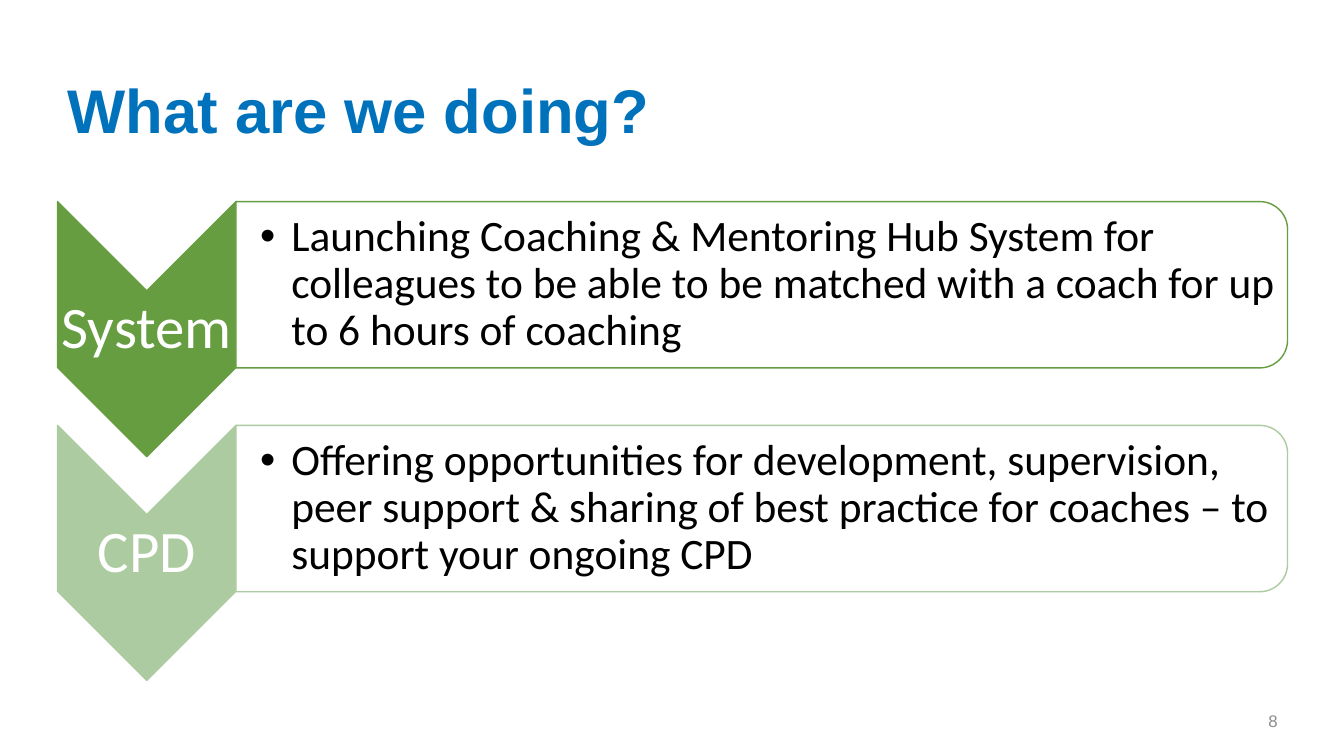
from dataclasses import dataclass

from lxml.etree import SubElement
from pptx import Presentation
from pptx.dml.color import RGBColor
from pptx.enum.shapes import MSO_SHAPE as Preset
from pptx.enum.text import MSO_ANCHOR as Anchor, MSO_AUTO_SIZE as AutoSize, PP_ALIGN as Align
from pptx.oxml.ns import qn
from pptx.util import Inches, Pt

HEADING = "What are we doing?"
PAGE_NUMBER = "8"
STEPS = [
    ("System", "Launching Coaching & Mentoring Hub System for colleagues to be able "
               "to be matched with a coach for up to 6 hours of coaching", "669D40"),
    ("CPD", "Offering opportunities for development, supervision, peer support & "
            "sharing of best practice for coaches – to support your ongoing CPD", "ADCBA0"),
]


@dataclass(frozen=True)
class Theme:
    heading_font: str = "Arial"
    body_font: str = "Calibri"
    heading: str = "0072BC"
    white: str = "FFFFFF"
    body: str = "000000"
    page: str = "8C8C8C"
    heading_size: int = 44
    label_size: int = 42
    body_size: int = 31
    page_size: int = 12


THEME = Theme()

LEFT, TOP, STEP_PITCH = 0.57, 2.0, 2.22
CHEVRON_W, CHEVRON_H = 1.77, 2.53
PANEL_W, PANEL_H = 10.43, 1.65
PANEL_LEFT = LEFT + CHEVRON_W
LABEL_H, LABEL_DROP = 0.76, 0.89
BULLET_W, BULLET_H = 10.34, 1.49
BULLET_INDENT = 0.31


def write(holder, box, text, font, size, color, align=Align.LEFT, inset=None, bold=False, spacing=0.9):
    holder.left, holder.top, holder.width, holder.height = map(Inches, box)
    frame = holder.text_frame
    frame.word_wrap = True
    frame.auto_size = AutoSize.NONE
    frame.vertical_anchor = Anchor.MIDDLE
    if inset:
        frame.margin_left, frame.margin_top, frame.margin_right, frame.margin_bottom = map(Inches, inset)
    paragraph = frame.paragraphs[0]
    paragraph.alignment = align
    paragraph.line_spacing = spacing
    paragraph.space_before = Pt(0)
    run = paragraph.add_run()
    run.text = text
    run.font.name, run.font.size, run.font.bold = font, Pt(size), bold
    run.font.color.rgb = RGBColor.from_string(color)
    return paragraph


def add_turned(slide, preset, left, top, width, height, fill, line):
    box = left + (width - height) / 2, top + (height - width) / 2, height, width
    turned = slide.shapes.add_shape(preset, *map(Inches, box))
    turned.rotation = 90
    turned.shadow.inherit = False
    turned.fill.solid()
    turned.fill.fore_color.rgb = RGBColor.from_string(fill)
    turned.line.color.rgb = RGBColor.from_string(line)
    turned.line.width = Pt(1)
    return turned


def add_step(slide, bullet, top, label, detail, color):
    add_turned(slide, Preset.CHEVRON, LEFT, top, CHEVRON_W, CHEVRON_H, color, color)
    write(slide.shapes.add_textbox(0, 0, 0, 0), (LEFT, top + LABEL_DROP, CHEVRON_W, LABEL_H),
          label, THEME.body_font, THEME.label_size, THEME.white, Align.CENTER, (0.03,) * 4)

    panel = add_turned(slide, Preset.ROUND_2_SAME_RECTANGLE, PANEL_LEFT, top,
                       PANEL_W, PANEL_H, THEME.white, color)
    fill_color = panel._element.spPr.find(qn("a:solidFill"))[0]
    SubElement(fill_color, qn("a:alpha")).set("val", "90000")

    panel._element.addnext(bullet._element)
    bullet_top = top + (PANEL_H - BULLET_H) / 2
    paragraph = write(bullet, (PANEL_LEFT, bullet_top, BULLET_W, BULLET_H), detail,
                      THEME.body_font, THEME.body_size, THEME.body, inset=(0.24, 0.02, 0.02, 0.02))
    properties = paragraph._p.get_or_add_pPr()
    properties.set("marL", str(Inches(BULLET_INDENT)))
    properties.set("indent", str(-Inches(BULLET_INDENT)))
    SubElement(properties, qn("a:buChar")).set("char", "•")


def main():
    deck = Presentation()
    deck.slide_width, deck.slide_height = Inches(13.33), Inches(7.5)
    slide = deck.slides.add_slide(deck.slide_layouts.get_by_name("Two Content"))
    heading, *bullets = slide.placeholders
    write(heading, (LEFT, 0.4, 12.2, 1.45), HEADING, THEME.heading_font,
          THEME.heading_size, THEME.heading, bold=True)
    for index, (bullet, step) in enumerate(zip(bullets, STEPS)):
        add_step(slide, bullet, TOP + index * STEP_PITCH, *step)
    write(slide.shapes.add_textbox(0, 0, 0, 0), (9.42, 6.95, 3.35, 0.4), PAGE_NUMBER,
          THEME.heading_font, THEME.page_size, THEME.page, Align.RIGHT, spacing=1.0)
    deck.save("out.pptx")


if __name__ == "__main__":
    main()
